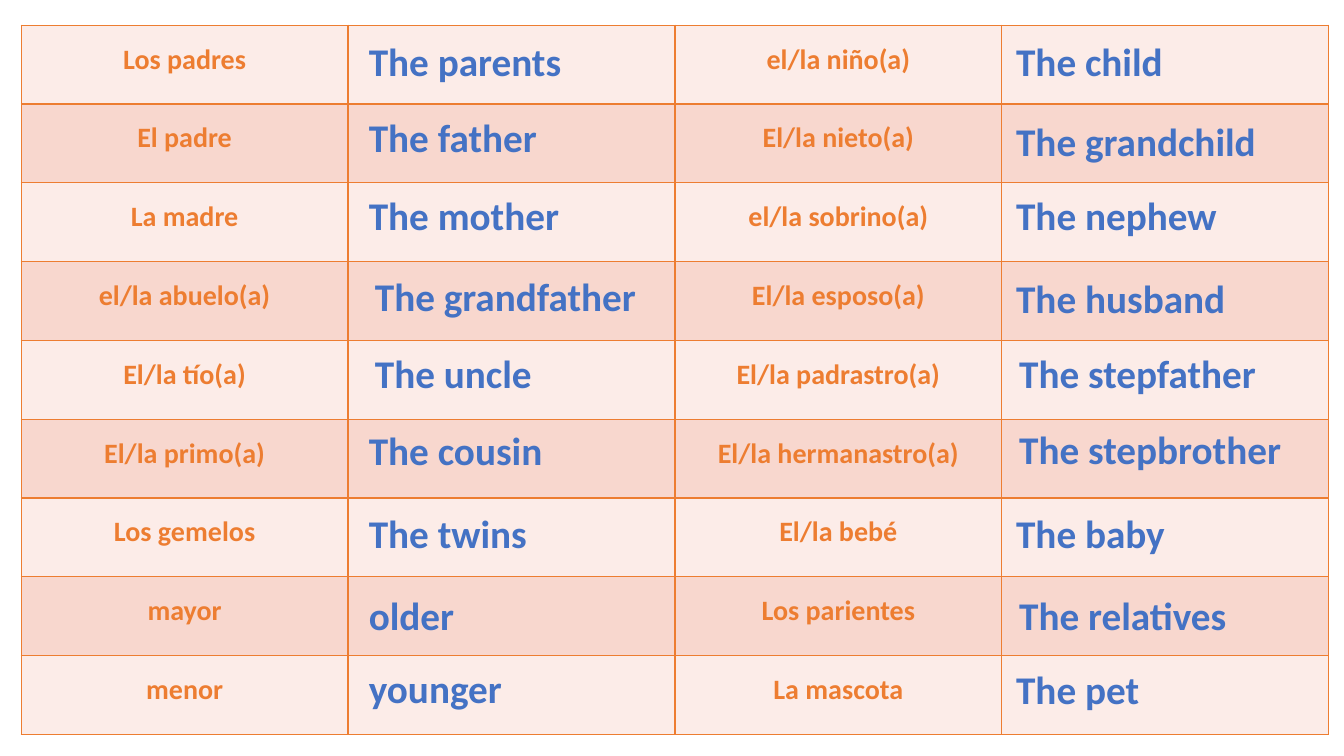
from dataclasses import dataclass

from lxml.etree import SubElement
from pptx import Presentation
from pptx.dml.color import RGBColor
from pptx.enum.text import MSO_AUTO_SIZE, PP_ALIGN
from pptx.oxml.ns import qn
from pptx.util import Inches, Pt


@dataclass(frozen=True)
class Theme:
    font: str = "Calibri"
    spanish: str = "ED7D31"
    english: str = "4472C4"
    border: str = "ED7D31"
    bands: tuple = ("FCECE8", "F8D7CE")
    spanish_size: int = 20
    english_size: int = 28
    border_width: int = 1


THEME = Theme()

SPANISH_WORDS = [
    ("Los padres", "el/la niño(a)"),
    ("El padre", "El/la nieto(a)"),
    ("La madre", "el/la sobrino(a)"),
    ("el/la abuelo(a)", "El/la esposo(a)"),
    ("El/la tío(a)", "El/la padrastro(a)"),
    ("El/la primo(a)", "El/la hermanastro(a)"),
    ("Los gemelos", "El/la bebé"),
    ("mayor", "Los parientes"),
    ("menor", "La mascota"),
]

# Each answer: wording, left, top, width in inches
ENGLISH_WORDS = [
    ("The parents", 3.56, 0.32, 2.51),
    ("The father", 3.56, 1.08, 2.51),
    ("The mother", 3.56, 1.85, 2.51),
    ("The grandfather", 3.62, 2.65, 2.8),
    ("The uncle", 3.62, 3.42, 2.8),
    ("The cousin", 3.56, 4.18, 2.8),
    ("The twins", 3.56, 5, 2.8),
    ("older", 3.56, 5.82, 2.8),
    ("younger", 3.56, 6.54, 2.8),
    ("The child", 9.98, 0.32, 2.8),
    ("The grandchild", 9.98, 1.11, 2.8),
    ("The nephew", 9.98, 1.85, 2.8),
    ("The husband", 9.98, 2.67, 2.8),
    ("The stepfather", 10.01, 3.42, 2.8),
    ("The stepbrother", 10.01, 4.17, 3.11),
    ("The baby", 9.98, 5, 2.8),
    ("The relatives", 10.01, 5.82, 2.8),
    ("The pet", 9.98, 6.55, 2.8),
]


def write_word(para, word, size, color):
    para.text = word
    for span in para.runs:
        span.font.name = THEME.font
        span.font.size = Pt(size)
        span.font.bold = True
        span.font.color.rgb = RGBColor.from_string(color)


def style_cell(cell, fill):
    """Set the insets, the four borders and the fill; borders must precede the fill in the XML."""
    cell.margin_left = cell.margin_right = Inches(0.07)
    cell.margin_top = cell.margin_bottom = 0
    properties = cell._tc.get_or_add_tcPr()
    for side in ("lnL", "lnR", "lnT", "lnB"):
        line = SubElement(properties, qn(f"a:{side}"), w=str(Pt(THEME.border_width)))
        solid = SubElement(line, qn("a:solidFill"))
        SubElement(solid, qn("a:srgbClr"), val=THEME.border)
    cell.fill.solid()
    cell.fill.fore_color.rgb = RGBColor.from_string(fill)


def add_vocabulary_table(page, left, top, width, height):
    row_count, column_count = len(SPANISH_WORDS), 4
    table = page.shapes.add_table(
        row_count, column_count, left, top, width, height
    ).table
    for column in table.columns:
        column.width = width // column_count
    for index, words in enumerate(SPANISH_WORDS):
        table.rows[index].height = height // row_count
        for cell in table.rows[index].cells:
            style_cell(cell, THEME.bands[index % 2])
        for pair, word in enumerate(words):
            para = table.cell(index, pair * 2).text_frame.paragraphs[0]
            write_word(para, word, THEME.spanish_size, THEME.spanish)
            para.alignment = PP_ALIGN.CENTER
            para.line_spacing = 1.5


def add_answer(page, word, left, top, width):
    box = page.shapes.add_textbox(left, top, width, Inches(0.57))
    frame = box.text_frame
    frame.word_wrap = True
    frame.auto_size = MSO_AUTO_SIZE.SHAPE_TO_FIT_TEXT
    write_word(frame.paragraphs[0], word, THEME.english_size, THEME.english)


def main():
    deck = Presentation()
    deck.slide_width, deck.slide_height = Inches(13.33), Inches(7.5)
    page = deck.slides.add_slide(deck.slide_layouts[6])
    add_vocabulary_table(page, Inches(0.21), Inches(0.25), Inches(12.97), Inches(7.04))
    for word, left, top, width in ENGLISH_WORDS:
        add_answer(page, word, Inches(left), Inches(top), Inches(width))
    deck.save("out.pptx")


if __name__ == "__main__":
    main()
